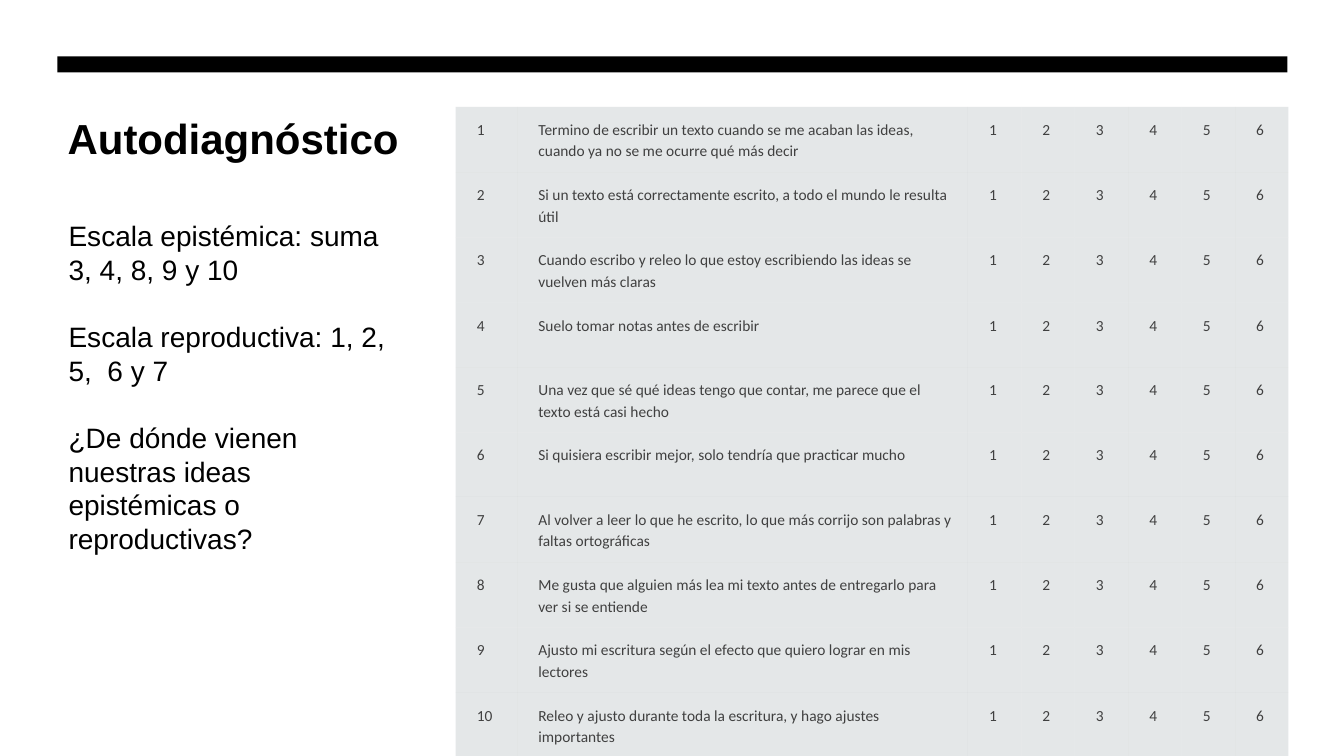
from dataclasses import dataclass

from lxml import etree
from pptx import Presentation
from pptx.dml.color import RGBColor
from pptx.enum import shapes, text
from pptx.oxml import ns
from pptx.util import Inches, Pt

BLACK = RGBColor(0x00, 0x00, 0x00)
WHITE = RGBColor(0xFF, 0xFF, 0xFF)
CELL_GREY = RGBColor(0xB4, 0xBC, 0xBE)
CELL_TEXT = RGBColor(0x40, 0x40, 0x40)
CELL_OPACITY = "35000"
NO_GRID_STYLE = "{2D5ABB26-0587-4C30-8999-92F81FD0307C}"

STATEMENTS = [
    "Termino de escribir un texto cuando se me acaban las ideas, cuando ya no se me ocurre qué más decir",
    "Si un texto está correctamente escrito, a todo el mundo le resulta útil",
    "Cuando escribo y releo lo que estoy escribiendo las ideas se vuelven más claras",
    "Suelo tomar notas antes de escribir",
    "Una vez que sé qué ideas tengo que contar, me parece que el texto está casi hecho",
    "Si quisiera escribir mejor, solo tendría que practicar mucho",
    "Al volver a leer lo que he escrito, lo que más corrijo son palabras y faltas ortográficas",
    "Me gusta que alguien más lea mi texto antes de entregarlo para ver si se entiende",
    "Ajusto mi escritura según el efecto que quiero lograr en mis lectores",
    "Releo y ajusto durante toda la escritura, y hago ajustes importantes",
]
RATINGS = [str(rating) for rating in range(1, 7)]
COLUMN_WIDTHS = [0.61, 4.47] + [0.53] * len(RATINGS)
ROW_HEIGHT = 0.64


@dataclass
class TextBlock:
    paragraphs: list[str]
    left: float
    top: float
    width: float
    height: float
    size: int
    line_height: int
    bold: bool = False
    space_after: int = 0


TITLE = TextBlock(["Autodiagnóstico"], 0.57, 1.07, 3.72, 0.9, 30, 36, bold=True)
SCALES = TextBlock(
    [
        "Escala epistémica: suma 3, 4, 8, 9 y 10",
        "Escala reproductiva: 1, 2, 5,  6 y 7",
        "¿De dónde vienen nuestras ideas epistémicas o reproductivas?",
    ],
    0.58, 2.12, 3.35, 3.47, 20, 24, space_after=24,
)


def fill_placeholder(placeholder, block: TextBlock) -> None:
    placeholder.left, placeholder.top = Inches(block.left), Inches(block.top)
    placeholder.width, placeholder.height = Inches(block.width), Inches(block.height)
    frame = placeholder.text_frame
    frame.text = "\n".join(block.paragraphs)
    frame.word_wrap = True
    frame.auto_size = text.MSO_AUTO_SIZE.NONE
    frame.vertical_anchor = text.MSO_ANCHOR.TOP
    for paragraph in frame.paragraphs:
        paragraph.alignment = text.PP_ALIGN.LEFT
        paragraph.line_spacing = Pt(block.line_height)
        paragraph.space_before = Pt(0)
        paragraph.space_after = Pt(block.space_after)
        properties = paragraph._p.get_or_add_pPr()
        properties.set("marL", "0")
        properties.set("indent", "0")
        etree.SubElement(properties, ns.qn("a:buNone"))
        paragraph.font.name = "Arial"
        paragraph.font.size = Pt(block.size)
        paragraph.font.bold = block.bold
        paragraph.font.color.rgb = BLACK


def add_top_bar(slide) -> None:
    bar = slide.shapes.add_shape(
        shapes.MSO_SHAPE.RECTANGLE, Inches(0.57), Inches(0.56), Inches(12.2), Inches(0.16)
    )
    bar.shadow.inherit = False
    bar.fill.solid()
    bar.fill.fore_color.rgb = BLACK
    bar.line.fill.background()


def format_cell(cell, content: str) -> None:
    cell.text = content
    cell.margin_left = Inches(0.21)
    cell.margin_right = cell.margin_top = cell.margin_bottom = Inches(0.11)
    cell.fill.solid()
    cell.fill.fore_color.rgb = CELL_GREY
    color = cell._tc.tcPr.find(".//" + ns.qn("a:srgbClr"))
    etree.SubElement(color, ns.qn("a:alpha"), val=CELL_OPACITY)
    paragraph = cell.text_frame.paragraphs[0]
    paragraph.line_spacing = Pt(15.4)
    paragraph.font.name = "Calibri"
    paragraph.font.size = Pt(11)
    paragraph.font.color.rgb = CELL_TEXT


def add_questionnaire(slide) -> None:
    table = slide.shapes.add_table(
        len(STATEMENTS), len(COLUMN_WIDTHS), Inches(4.52), Inches(1.06),
        Inches(sum(COLUMN_WIDTHS)), Inches(ROW_HEIGHT * len(STATEMENTS)),
    ).table
    table.first_row = table.horz_banding = False
    table._tbl.tblPr.find(ns.qn("a:tableStyleId")).text = NO_GRID_STYLE
    for column, width in zip(table.columns, COLUMN_WIDTHS):
        column.width = Inches(width)
    for number, (row, statement) in enumerate(zip(table.rows, STATEMENTS), start=1):
        row.height = Inches(ROW_HEIGHT)
        for cell, content in zip(row.cells, [str(number), statement, *RATINGS]):
            format_cell(cell, content)


def main() -> None:
    presentation = Presentation()
    presentation.slide_width, presentation.slide_height = Inches(13.33), Inches(7.5)
    slide = presentation.slides.add_slide(presentation.slide_layouts[1])
    slide.background.fill.solid()
    slide.background.fill.fore_color.rgb = WHITE
    fill_placeholder(slide.shapes.title, TITLE)
    fill_placeholder(slide.placeholders[1], SCALES)
    add_top_bar(slide)
    add_questionnaire(slide)
    presentation.save("out.pptx")


if __name__ == "__main__":
    main()
